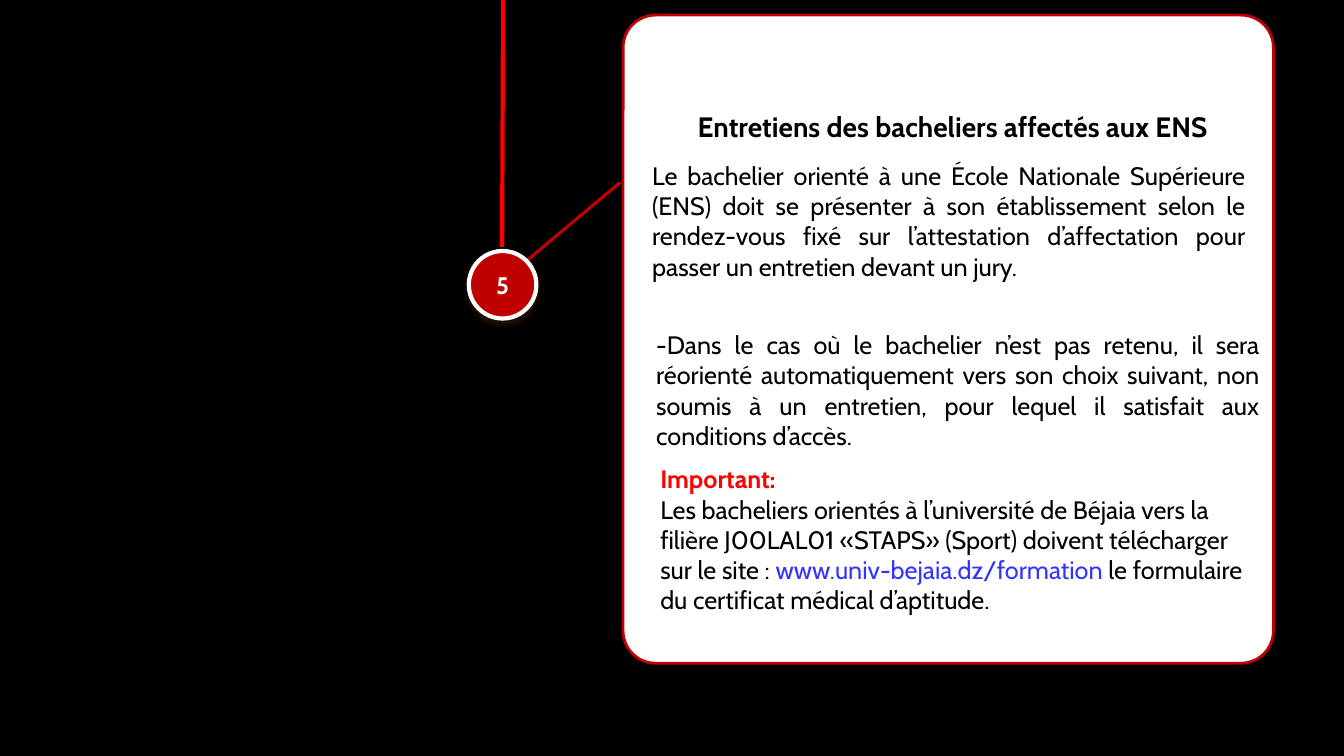
from pptx import Presentation
from pptx.dml.color import RGBColor
from pptx.enum import shapes, text
from pptx.oxml import parse_xml
from pptx.oxml.ns import nsdecls
from pptx.util import Inches, Pt

BLACK = RGBColor(0x00, 0x00, 0x00)
WHITE = RGBColor(0xFF, 0xFF, 0xFF)
RED = RGBColor(0xFF, 0x00, 0x00)
DARK_RED = RGBColor(0xC0, 0x00, 0x00)
LINK_BLUE = RGBColor(0x33, 0x33, 0xFF)
FONT = "Cabin"

INTERVIEW = (
    "Le bachelier orienté à une École Nationale Supérieure (ENS) doit se "
    "présenter à son établissement selon le rendez-vous fixé sur l’attestation "
    "d’affectation pour passer un entretien devant un jury."
)
REORIENTATION = (
    "-Dans le cas où le bachelier n’est pas retenu, il sera réorienté "
    "automatiquement vers son choix suivant, non soumis à un entretien, pour "
    "lequel il satisfait aux conditions d’accès."
)
SPORT_NOTICE = [
    ("Les bacheliers orientés à l’université de Béjaia vers la filière J00LAL01 "
     "«STAPS» (Sport) doivent télécharger sur le site : ", BLACK),
    ("www.univ-bejaia.dz/formation ", LINK_BLUE),
    ("le formulaire du certificat médical d’aptitude.", BLACK),
]


def style_paragraph(paragraph, size, color=None, bold=False, align=None):
    font = paragraph.font
    font.name, font.size, font.bold = FONT, Pt(size), bold
    if color is not None:
        font.color.rgb = color
    paragraph.alignment = align


def add_line(slide, start, end, color, width):
    line = slide.shapes.add_connector(
        shapes.MSO_CONNECTOR.STRAIGHT, *map(Inches, start + end))
    line.line.color.rgb = color
    line.line.width = Pt(width)
    line._element.spPr.append(parse_xml(f"<a:effectLst {nsdecls('a')}/>"))


def add_outlined_shape(slide, kind, box, fill, outline, width):
    shape = slide.shapes.add_shape(kind, *map(Inches, box))
    shape.shadow.inherit = False
    shape.fill.solid()
    shape.fill.fore_color.rgb = fill
    shape.line.color.rgb = outline
    shape.line.width = Pt(width)
    return shape


def add_drop_shadow(shape):
    effects = shape._element.spPr.find("{*}effectLst")
    effects.append(parse_xml(
        f'<a:outerShdw {nsdecls("a")} blurRad="{Pt(4.5)}" dist="{Pt(3)}" '
        'dir="5400000" algn="ctr" rotWithShape="0">'
        '<a:srgbClr val="4F2511"><a:alpha val="48000"/></a:srgbClr></a:outerShdw>'))


def add_step_badge(slide, number, box):
    badge = add_outlined_shape(
        slide, shapes.MSO_SHAPE.OVAL, box, DARK_RED, WHITE, 3)
    add_drop_shadow(badge)
    frame = badge.text_frame
    frame.vertical_anchor = text.MSO_ANCHOR.MIDDLE
    paragraph = frame.paragraphs[0]
    paragraph.text = number
    style_paragraph(paragraph, 17.1, WHITE, True, text.PP_ALIGN.CENTER)


def add_text_frame(slide, box):
    frame = slide.shapes.add_textbox(*map(Inches, box)).text_frame
    frame.word_wrap = True
    return frame


def add_justified_text(slide, content, box):
    paragraph = add_text_frame(slide, box).paragraphs[0]
    paragraph.text = content
    style_paragraph(paragraph, 18, BLACK, align=text.PP_ALIGN.JUSTIFY)


def add_notice(slide, heading, parts, box):
    """Add a red heading followed by a paragraph of coloured runs."""
    frame = add_text_frame(slide, box)
    title = frame.paragraphs[0]
    title.text = heading
    style_paragraph(title, 18, RED, True)
    body = frame.add_paragraph()
    style_paragraph(body, 18)
    for content, color in parts:
        run = body.add_run()
        run.text = content
        run.font.color.rgb = color


def place_title(slide, content, box):
    """Fill the title placeholder and bring it in front of the card."""
    title = slide.shapes.title
    title.left, title.top, title.width, title.height = map(Inches, box)
    frame = title.text_frame
    frame.word_wrap = True
    frame.auto_size = text.MSO_AUTO_SIZE.NONE
    frame.vertical_anchor = text.MSO_ANCHOR.TOP
    paragraph = frame.paragraphs[0]
    paragraph.text = content
    style_paragraph(paragraph, 20, BLACK, True, text.PP_ALIGN.CENTER)
    title.element.getparent().append(title.element)


def main():
    presentation = Presentation()
    presentation.slide_width = Inches(13.33)
    presentation.slide_height = Inches(7.5)
    slide = presentation.slides.add_slide(presentation.slide_layouts[5])
    slide.background.fill.solid()
    slide.background.fill.fore_color.rgb = BLACK

    add_line(slide, (4.99, -0.05), (4.98, 2.45), RED, 3)
    add_line(slide, (5.22, 2.59), (6.15, 1.81), DARK_RED, 2.25)
    card = add_outlined_shape(slide, shapes.MSO_SHAPE.ROUNDED_RECTANGLE,
                              (6.18, 0.15, 6.45, 6.43), WHITE, DARK_RED, 2)
    card.adjustments[0] = 0.05
    add_step_badge(slide, "5", (4.65, 2.49, 0.67, 0.67))

    place_title(slide, "Entretiens des bacheliers affectés aux ENS",
                (6.26, 1.04, 6.38, 0.44))
    add_justified_text(slide, INTERVIEW, (6.37, 1.54, 6.08, 1.62))
    add_justified_text(slide, REORIENTATION, (6.41, 3.22, 6.18, 1.31))
    add_notice(slide, "Important:", SPORT_NOTICE, (6.45, 4.55, 6.18, 1.62))

    presentation.save("out.pptx")


if __name__ == "__main__":
    main()
